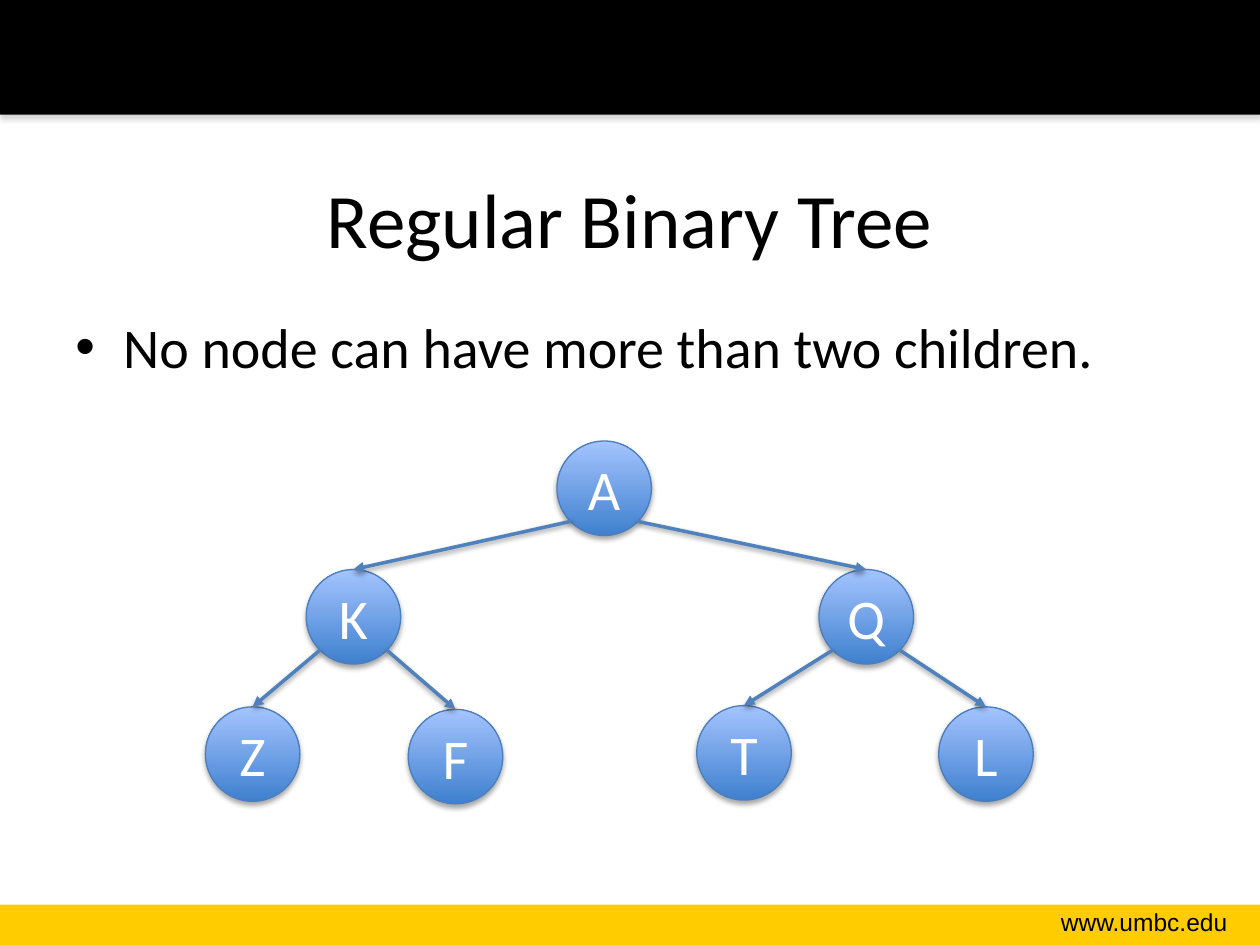
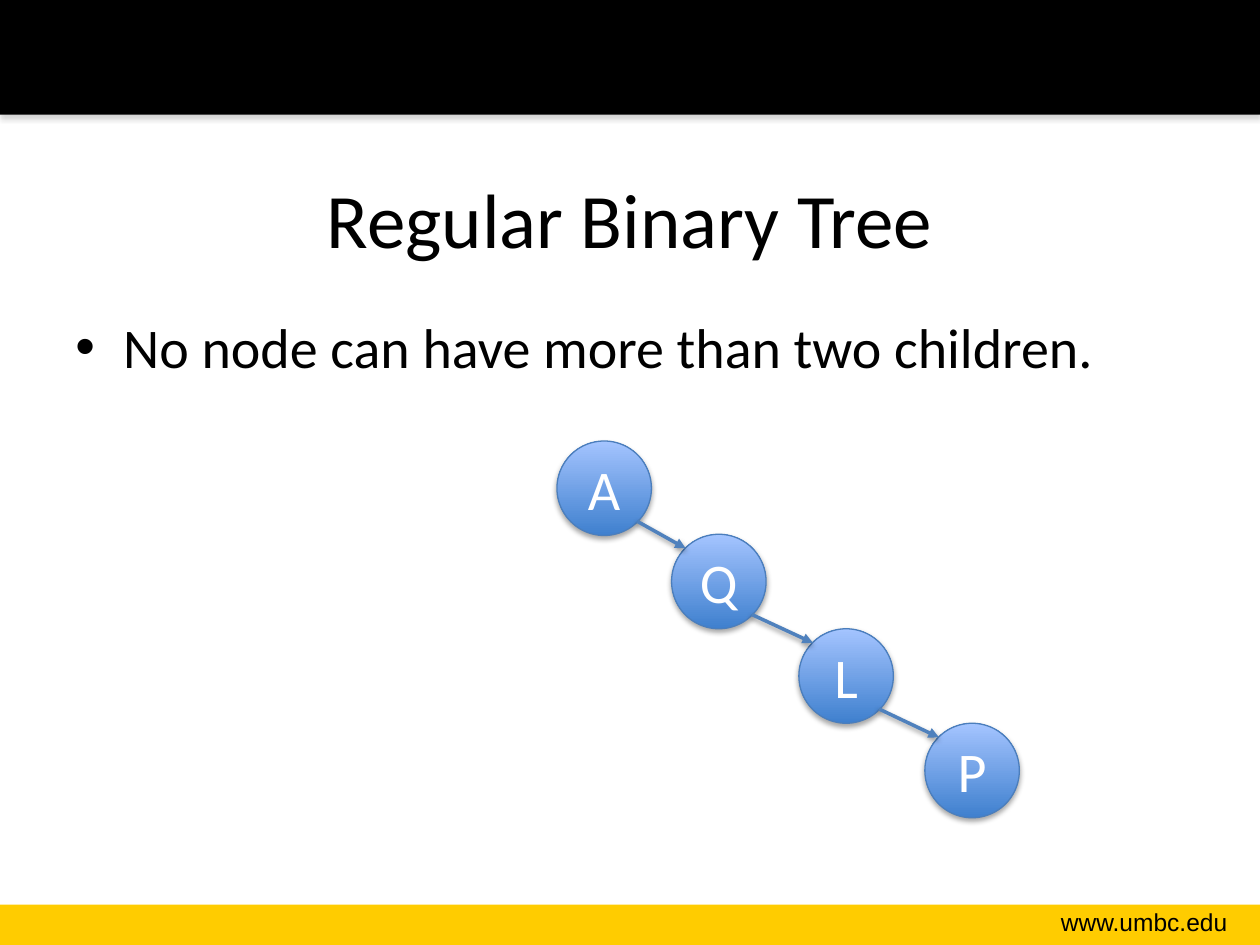
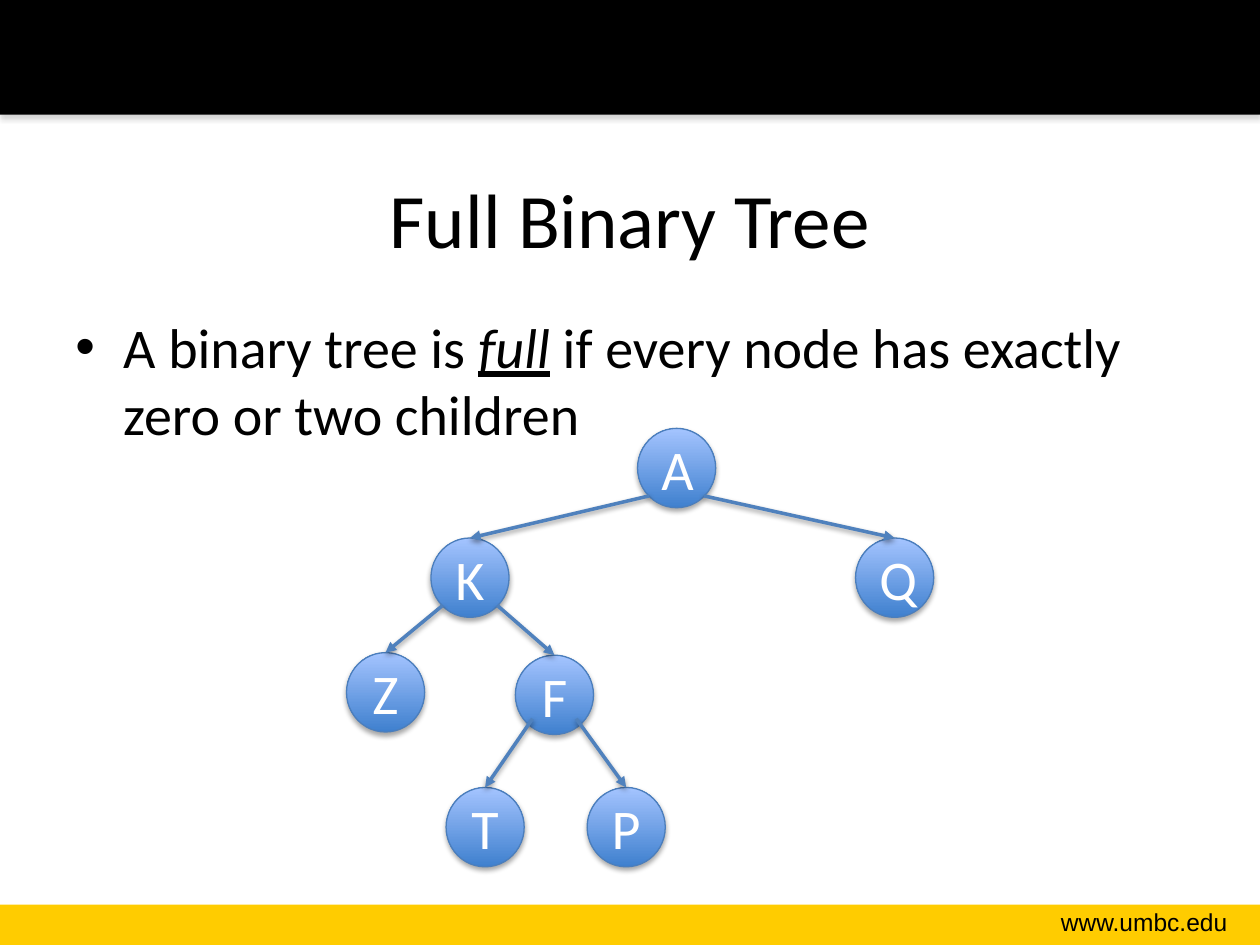
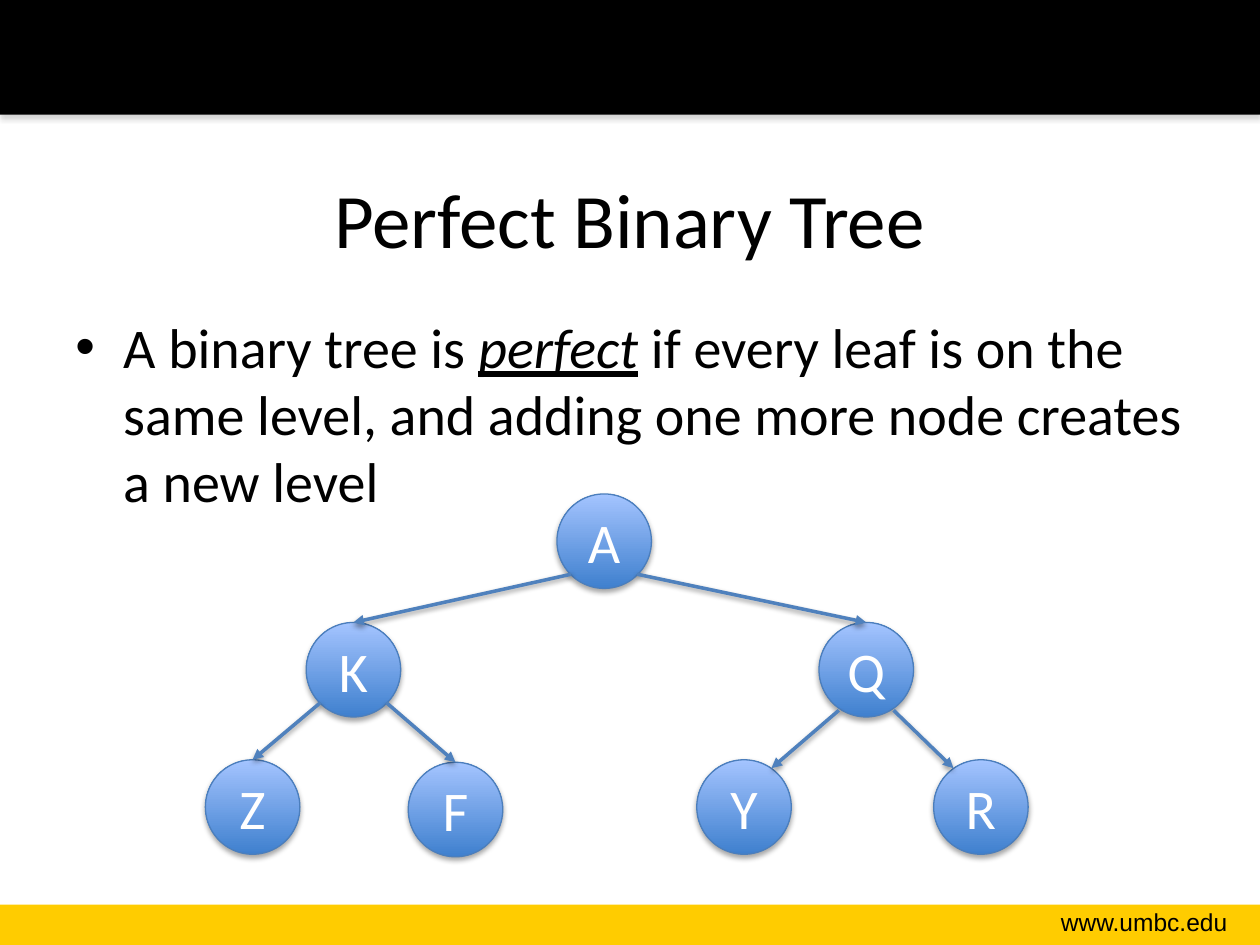
"""Build four slides on regular, full and perfect binary trees."""
from lxml import etree
from pptx import Presentation, util as u
from pptx.dml.color import RGBColor
from pptx.enum import shapes, text
from pptx.oxml.ns import qn

COLORS = {
    "black": "000000", "white": "FFFFFF", "gold": "FFCC00", "gray": "808080",
    "node_low": "3F80CE", "node_high": "A4C4FF", "node_line": "4B7EBC", "edge": "4F81BD",
}
COLUMNS, ROWS = 100, 75
CELL = u.Inches(0.1)
CORNER, TOP, UPPER_CORNER = (0.35, 0.35), (0, -0.5), (0.35, -0.35)
NO_MORE_THAN_TWO = ["No node can have more than two children."]

SLIDES = [
    {
        "title": "Regular Binary Tree",
        "body": NO_MORE_THAN_TWO,
        "node_size": (7.5, 7.5),
        "nodes": {"A": (44.2, 35), "K": (24.3, 45.2), "Q": (65, 45.2), "Z": (16.3, 56.1),
                  "F": (32.4, 56.3), "T": (55.3, 56), "L": (74.5, 56.1)},
        "edges": [("A", "KQ", CORNER, TOP), ("K", "ZF", CORNER, TOP), ("Q", "TL", CORNER, TOP)],
    },
    {
        "title": "Regular Binary Tree",
        "body": NO_MORE_THAN_TWO,
        "node_size": (7.5, 7.5),
        "nodes": {"A": (44.2, 35), "Q": (53.3, 42.4), "L": (63.4, 49.9), "P": (73.4, 57.4)},
        "edges": [("A", "Q", CORNER, UPPER_CORNER), ("Q", "L", CORNER, UPPER_CORNER),
                  ("L", "P", CORNER, UPPER_CORNER)],
    },
    {
        "title": "Full Binary Tree",
        "body": ["A binary tree is ", "full", " if every node has exactly zero or two children"],
        "node_size": (6.2, 6.3),
        "nodes": {"A": (50.6, 34), "Z": (27.5, 51.8), "F": (40.9, 52), "K": (34.2, 42.7),
                  "Q": (67.9, 42.7), "T": (35.4, 62.5), "P": (46.6, 62.5)},
        "edges": [("A", "KQ", CORNER, TOP), ("K", "ZF", CORNER, TOP),
                  ("F", "TP", (0.28, 0.3), TOP)],
    },
    {
        "title": "Perfect Binary Tree",
        "body": ["A binary tree is ", "perfect",
                 " if every leaf is on the same level, and adding one more node creates a new level"],
        "node_size": (7.5, 7.5),
        "nodes": {"A": (44.2, 39.2), "K": (24.3, 49.4), "Q": (65, 49.4), "Z": (16.3, 60.3),
                  "F": (32.4, 60.5), "Y": (55.3, 60.3), "R": (74.1, 60.3)},
        "edges": [("A", "KQ", CORNER, TOP), ("K", "ZF", CORNER, TOP),
                  ("Q", "YR", (0.29, 0.43), (0.29, -0.41))],
    },
]


def add_shadow(shape, color, opacity, distance):
    """Give a shape or connector a soft shadow below it."""
    properties = shape._element.spPr
    for effects in properties.findall(qn("a:effectLst")):
        properties.remove(effects)
    effects = etree.SubElement(properties, qn("a:effectLst"))
    shadow = etree.SubElement(effects, qn("a:outerShdw"), blurRad=str(u.Pt(3.1)),
                              dist=str(u.Pt(distance)), dir="5400000", rotWithShape="0")
    tint = etree.SubElement(shadow, qn("a:srgbClr"), val=COLORS[color])
    etree.SubElement(tint, qn("a:alpha"), val=str(opacity * 1000))


def write(shape, segments, size, color, align, anchor, font="Calibri"):
    """Fill a shape with one paragraph whose second segment is emphasised."""
    frame = shape.text_frame
    frame.word_wrap = True
    frame.vertical_anchor = anchor
    paragraph = frame.paragraphs[0]
    paragraph.alignment = align
    for index, segment in enumerate(segments):
        run = paragraph.add_run()
        run.text = segment
        run.font.name, run.font.size = font, u.Pt(size)
        run.font.color.rgb = RGBColor.from_string(COLORS[color])
        if index == 1:
            run.font.italic = run.font.underline = True
    return paragraph


presentation = Presentation()
presentation.slide_width, presentation.slide_height = COLUMNS * CELL, ROWS * CELL
left, center, right = text.PP_ALIGN.LEFT, text.PP_ALIGN.CENTER, text.PP_ALIGN.RIGHT
top, middle = text.MSO_ANCHOR.TOP, text.MSO_ANCHOR.MIDDLE

for content in SLIDES:
    slide = presentation.slides.add_slide(presentation.slide_layouts[6])

    for color, row, height in [("gold", 71.8, 3.2), ("black", 0, 9.1)]:
        band = slide.shapes.add_shape(shapes.MSO_SHAPE.RECTANGLE, 0, int(row * CELL),
                                      COLUMNS * CELL, int(height * CELL))
        band.fill.solid()
        band.fill.fore_color.rgb = RGBColor.from_string(COLORS[color])
        band.line.fill.background()
        band.shadow.inherit = False
    add_shadow(band, "gray", 35, 1.8)

    boxes = [
        ((78.5, 71.5, 19.9, 3.4), ["www.umbc.edu"], 14, right, top, "Arial"),
        ((5, 11, 90, 12.5), [content["title"]], 44, center, middle, "Calibri"),
        ((5, 24.3, 90, 9), content["body"], 32, left, top, "Calibri"),
    ]
    for place, segments, size, align, anchor, font in boxes:
        box = slide.shapes.add_textbox(*[int(length * CELL) for length in place])
        paragraph = write(box, segments, size, "black", align, anchor, font)
    bullet = paragraph._p.get_or_add_pPr()
    bullet.set("marL", str(u.Inches(0.38)))
    bullet.set("indent", str(u.Inches(-0.38)))
    etree.SubElement(bullet, qn("a:buFont"), typeface="Arial")
    etree.SubElement(bullet, qn("a:buChar"), char="•")

    node_width, node_height = content["node_size"]
    centers = {}
    for letter, (column, row) in content["nodes"].items():
        centers[letter] = (column + node_width / 2, row + node_height / 2)
        node = slide.shapes.add_shape(
            shapes.MSO_SHAPE.OVAL,
            *[int(length * CELL) for length in (column, row, node_width, node_height)])
        node.fill.gradient()
        node.fill.gradient_angle = 90
        for stop, color in zip(node.fill.gradient_stops, ("node_low", "node_high")):
            stop.color.rgb = RGBColor.from_string(COLORS[color])
        node.line.color.rgb = RGBColor.from_string(COLORS["node_line"])
        node.line.width = u.Pt(0.75)
        add_shadow(node, "black", 35, 1.8)
        write(node, [letter], 32, "white", center, middle)

    for parent, children, start, end in content["edges"]:
        for child in children:
            (parent_x, parent_y), (child_x, child_y) = centers[parent], centers[child]
            side = 1 if child_x > parent_x else -1
            ends = (parent_x + side * start[0] * node_width, parent_y + start[1] * node_height,
                    child_x - side * end[0] * node_width, child_y + end[1] * node_height)
            edge = slide.shapes.add_connector(shapes.MSO_CONNECTOR.STRAIGHT,
                                              *[int(length * CELL) for length in ends])
            edge.line.color.rgb = RGBColor.from_string(COLORS["edge"])
            edge.line.width = u.Pt(2)
            etree.SubElement(edge._element.spPr.find(qn("a:ln")), qn("a:tailEnd"), type="triangle")
            add_shadow(edge, "black", 38, 1.6)

presentation.save("out.pptx")
